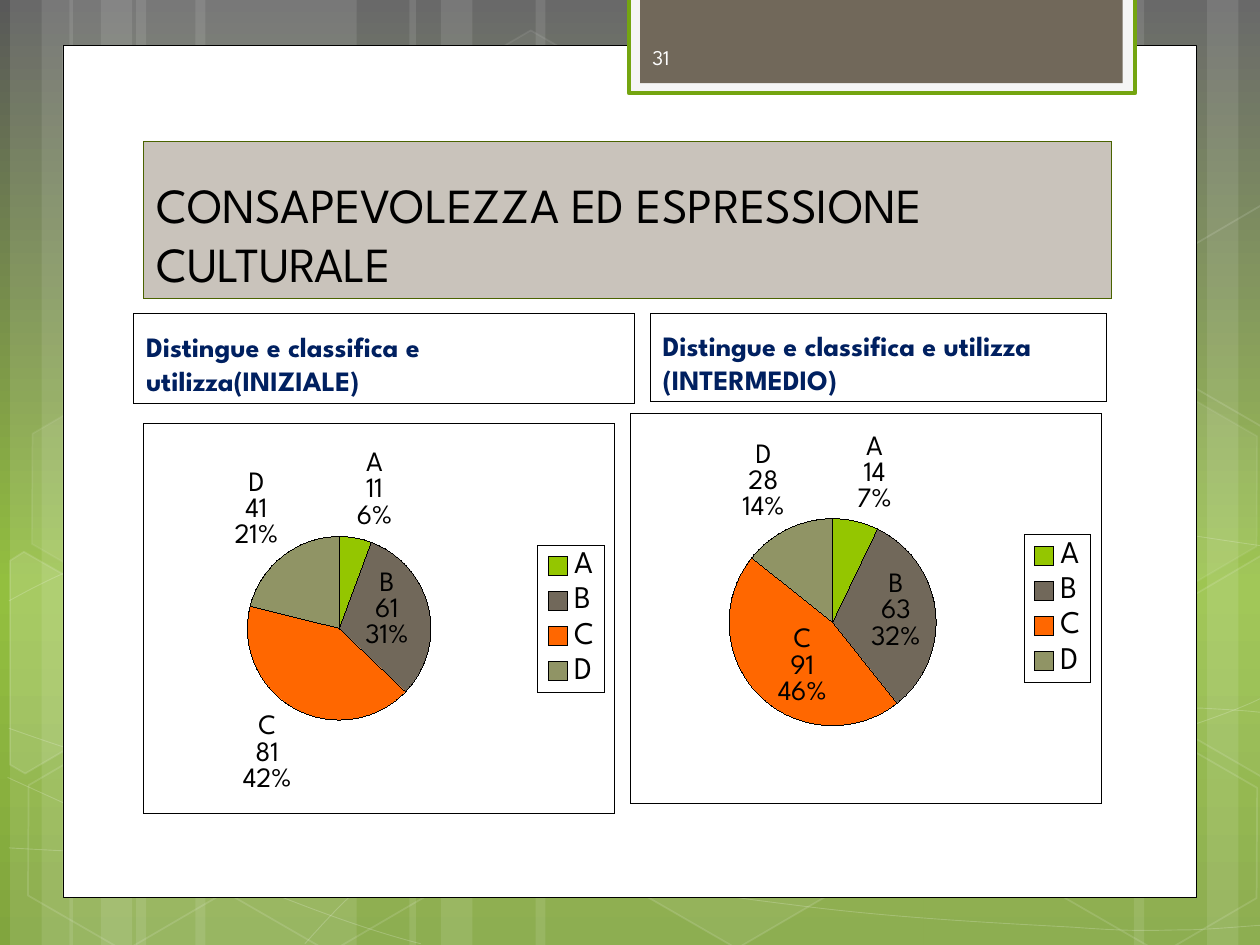
from copy import deepcopy

from lxml.etree import SubElement
from pptx import Presentation
from pptx.chart.data import CategoryChartData
from pptx.dml.color import RGBColor
from pptx.enum.chart import XL_CHART_TYPE, XL_LABEL_POSITION, XL_LEGEND_POSITION
from pptx.enum.shapes import MSO_SHAPE
from pptx.enum.text import MSO_ANCHOR, MSO_AUTO_SIZE, PP_ALIGN
from pptx.oxml import parse_xml
from pptx.oxml.ns import nsdecls, qn
from pptx.util import Inches, Pt

FONT = "League Spartan"
BACKGROUND = [(0, "595959"), (0.62, "93BF3F"), (1, "81A53E")]

# Background decoration: bands as (left, width), all full height
BANDS = [(1.08, 1.75), (0.08, 0.5), (0.33, 0.83), (1.55, 1.75), (0.55, 0.5), (0.8, 0.83),
         (7.33, 1.75), (9.58, 0.5), (9, 0.83), (4.25, 3.08), (3.25, 0.5), (3.5, 0.83)]
# Start point, then Bézier segments of two control points and an end point, or lines
CURVES = [
    [(0.07, 6.73), (0.61, 6.76, 1.15, 6.79, 1.9, 6.78), (2.65, 6.77, 3.58, 6.75, 4.58, 6.65),
     (5.58, 6.55, 7, 6.36, 7.92, 6.17), (8.83, 5.98, 9.77, 5.68, 10.07, 5.51)],
    [(0.07, 4.77), (0.36, 4.61, 0.65, 4.46, 1.21, 4.31), (1.78, 4.16, 2.59, 3.94, 3.47, 3.87),
     (4.36, 3.8, 5.44, 3.79, 6.54, 3.87), (7.64, 3.95, 9.47, 4.26, 10.07, 4.34)],
    [(0.06, 6.17), (1.27, 6.72, 2.47, 7.27, 3.34, 7.49)],
    [(0.07, 5.78), (0.38, 5.89, 0.7, 6, 1.28, 6.16), (1.86, 6.31, 2.73, 6.56, 3.57, 6.73),
     (4.4, 6.9, 5.45, 7.08, 6.28, 7.18), (7.11, 7.29, 8, 7.33, 8.53, 7.36),
     (9.05, 7.4, 9.19, 7.38, 9.45, 7.38), (9.71, 7.37, 9.89, 7.35, 10.07, 7.34)],
    [(2.42, 7.49), (2.6, 7.29, 2.78, 7.09, 3.02, 6.91), (3.26, 6.73, 3.6, 6.53, 3.88, 6.39),
     (4.16, 6.25, 4.33, 6.19, 4.7, 6.09), (5.06, 5.99, 5.73, 5.85, 6.08, 5.78),
     (6.44, 5.71, 6.49, 5.71, 6.8, 5.69), (7.11, 5.66, 7.6, 5.63, 7.94, 5.62),
     (8.29, 5.61, 8.86, 5.62, 8.86, 5.62), (9.53, 5.62),
     (9.71, 5.63, 9.88, 5.64, 9.97, 5.65), (10.06, 5.66, 10.03, 5.65, 10.06, 5.66)],
]
# left, top, fill opacity, line opacity (percent)
HEXAGONS = [(3.34, 0.36, 4, 8), (4.97, 5.89, 6, 12), (0.11, 5.91, 0, 12),
            (0.14, 3.12, 7, 8), (1.74, 5.92, 0, 12), (7.53, 4.53, 10, 12),
            (8.34, 5.93, 0, 12), (8.34, 3.14, 7, 8)]
# points, fill opacity
CUT_HEXAGONS = [
    ([(0.08, 4.45), (0.19, 4.38), (0.96, 4.82), (0.95, 5.7), (0.2, 6.14), (0.08, 6.07)], 10),
    ([(9.26, 4.85), (10.01, 4.41), (10.09, 4.46), (10.09, 6.13), (10.02, 6.17), (9.26, 5.73)], 4),
    ([(9.26, 2.07), (10.01, 1.63), (10.1, 1.68), (10.09, 3.35), (10.02, 3.39), (9.26, 2.95)], 0),
]
# box, fill, line colour, line width
PANELS = [((0.5, 0.36, 9, 6.76), "FFFFFF", "000000", 0.5),
          ((4.99, -0.02, 4.02, 0.76), "F5F5F5", "74A510", 2.25),
          ((5.08, -0.02, 3.83, 0.68), "71685A", None, None)]

TITLE = "CONSAPEVOLEZZA ED ESPRESSIONE CULTURALE"
PAGE_NUMBER = "31"
GRADES = {"A": "94C600", "B": "71685A", "C": "FF6700", "D": "909465"}
COLUMNS = [
    {"placeholder": 1, "heading": "Distingue e classifica e utilizza(INIZIALE)",
     "heading_box": (1.06, 2.49, 3.98, 0.71), "chart_box": (1.14, 3.36, 3.74, 3.1),
     "values": (11, 61, 81, 41), "pie": {"x": 0.22, "y": 0.29, "w": 0.39, "h": 0.47}},
    {"placeholder": 3, "heading": "Distingue e classifica e utilizza (INTERMEDIO)",
     "heading_box": (5.16, 2.49, 3.62, 0.7), "chart_box": (5, 3.28, 3.74, 3.1),
     "values": (14, 63, 91, 28), "pie": {"x": 0.21, "y": 0.27, "w": 0.44, "h": 0.53}},
]


def paint(fill, color, opacity=100):
    if not color or not opacity:
        fill.background()
        return
    fill.solid()
    fill.fore_color.rgb = RGBColor.from_string(color)
    if opacity < 100:
        node = fill._xPr.find(qn("a:solidFill")).find(qn("a:srgbClr"))
        SubElement(node, qn("a:alpha"), val=str(opacity * 1000))


def outline(line, color, width=None, opacity=100):
    """Colour a line; without a width it stays a hairline."""
    paint(line.fill, color, opacity)
    if width:
        line.width = Pt(width)


def style_font(font, size, color="000000", bold=False):
    font.name, font.size, font.bold = FONT, Pt(size), bold
    font.color.rgb = RGBColor.from_string(color)


def add_preset(page, preset, box):
    shape = page.shapes.add_shape(preset, *map(Inches, box))
    shape.shadow.inherit = False
    return shape


def add_outline(page, points, closed):
    points = [(Inches(x), Inches(y)) for x, y in points]
    builder = page.shapes.build_freeform(*points[0])
    builder.add_line_segments(points[1:], close=closed)
    shape = builder.convert_to_shape()
    shape.shadow.inherit = False
    return shape


def add_curve(page, start, *segments):
    """Draw a freeform through the end points, then bend its Bézier segments."""
    shape = add_outline(page, [start] + [segment[-2:] for segment in segments], False)
    lines = shape._element.findall(".//" + qn("a:lnTo"))
    for line, segment in zip(lines, segments):
        if len(segment) == 6:
            line.tag = qn("a:cubicBezTo")
            for index in (0, 2):
                control = parse_xml(f'<a:pt {nsdecls("a")}/>')
                control.set("x", str(Inches(segment[index]) - shape.left))
                control.set("y", str(Inches(segment[index + 1]) - shape.top))
                line.insert(index // 2, control)
    return shape


def set_background(page):
    fill = page.background.fill
    fill.gradient()
    fill.gradient_angle = 270
    stop_list = page._element.find(".//" + qn("a:gsLst"))
    stop_list.append(deepcopy(stop_list[-1]))
    for stop, (position, color) in zip(fill.gradient_stops, BACKGROUND):
        stop.position = position
        stop.color.rgb = RGBColor.from_string(color)


def decorate(page):
    for left, width in BANDS:
        band = add_preset(page, MSO_SHAPE.RECTANGLE, (left, 0, width, 7.5))
        paint(band.fill, "FFFFFF", 10)
        outline(band.line, None)
    for curve in CURVES:
        shape = add_curve(page, *curve)
        paint(shape.fill, None)
        outline(shape.line, "FFFFFF", 0.5, 20)
    for left, top, fill_opacity, line_opacity in HEXAGONS:
        hexagon = add_preset(page, MSO_SHAPE.HEXAGON, (left, top, 1.75, 1.52))
        hexagon.rotation = 30
        hexagon.adjustments[0] = 0.285
        paint(hexagon.fill, "FFFFFF", fill_opacity)
        outline(hexagon.line, "FFFFFF", 1, line_opacity)
    for points, opacity in CUT_HEXAGONS:
        shape = add_outline(page, points, True)
        paint(shape.fill, "FFFFFF", opacity)
        outline(shape.line, "FFFFFF", 1, 12)
    for box, fill, line, width in PANELS:
        panel = add_preset(page, MSO_SHAPE.RECTANGLE, box)
        paint(panel.fill, fill)
        outline(panel.line, line, width)


def write(shape, box, text, anchor, size, color, bold=False):
    """Place the shape on top of the page and set its one paragraph."""
    shape._element.getparent().append(shape._element)
    shape.left, shape.top, shape.width, shape.height = map(Inches, box)
    frame = shape.text_frame
    frame.word_wrap, frame.auto_size = True, MSO_AUTO_SIZE.NONE
    frame.vertical_anchor = anchor
    para = frame.paragraphs[0]
    para.alignment = PP_ALIGN.LEFT
    span = para.add_run()
    span.text = text
    style_font(span.font, size, color, bold)


def border_xml():
    return parse_xml(f'<c:spPr {nsdecls("c", "a")}><a:noFill/><a:ln><a:solidFill>'
                     '<a:srgbClr val="000000"/></a:solidFill></a:ln></c:spPr>')


def add_pie(page, column):
    data = CategoryChartData()
    data.categories = list(GRADES)
    data.add_series("Series 1", column["values"])
    chart = page.shapes.add_chart(XL_CHART_TYPE.PIE, *map(Inches, column["chart_box"]), data).chart
    chart.has_title = False
    style_font(chart.font, 18)
    chart._chartSpace.find(qn("c:chart")).addnext(border_xml())
    chart.has_legend = True
    chart.legend.position = XL_LEGEND_POSITION.RIGHT
    chart.legend.include_in_layout = False
    style_font(chart.legend.font, 18)
    chart.legend._element.find(qn("c:overlay")).addnext(border_xml())

    plot_area = chart._chartSpace.find(".//" + qn("c:plotArea"))
    for layout in plot_area.findall(qn("c:layout")):
        plot_area.remove(layout)
    sizes = "".join(f'<c:{key} val="{value}"/>' for key, value in column["pie"].items())
    plot_area.insert(0, parse_xml(
        f'<c:layout {nsdecls("c")}><c:manualLayout><c:layoutTarget val="inner"/>'
        f'<c:xMode val="edge"/><c:yMode val="edge"/>{sizes}</c:manualLayout></c:layout>'))

    series = chart.plots[0].series[0]
    for index, color in enumerate(GRADES.values()):
        slice_format = series.points[index].format
        paint(slice_format.fill, color)
        outline(slice_format.line, "000000")
    labels = series.data_labels
    labels.show_value = labels.show_category_name = labels.show_percentage = True
    labels.position = XL_LABEL_POSITION.BEST_FIT
    style_font(labels.font, 16)
    separator = parse_xml(f'<c:separator {nsdecls("c")}>\n</c:separator>')
    labels._element.find(qn("c:showBubbleSize")).addnext(separator)


deck = Presentation()
deck.slide_width, deck.slide_height = Inches(10), Inches(7.5)
page = deck.slides.add_slide(deck.slide_layouts[4])
holders = {holder.placeholder_format.idx: holder for holder in page.placeholders}
set_background(page)
decorate(page)

title = holders.pop(0)
write(title, (1.14, 1.12, 7.68, 1.25), TITLE, MSO_ANCHOR.BOTTOM, 28, "000000")
paint(title.fill, "C9C3BB")
outline(title.line, "4A6300")

for column in COLUMNS:
    heading = holders.pop(column["placeholder"])
    write(heading, column["heading_box"], column["heading"], MSO_ANCHOR.BOTTOM, 16, "002060", True)
    heading.text_frame.paragraphs[0].space_before = Pt(3)
    outline(heading.line, "000000")
    add_pie(page, column)

for unused in holders.values():
    unused._element.getparent().remove(unused._element)

number_box = (5.08, 0.25, 1.46, 0.4)
number = page.shapes.add_textbox(*map(Inches, number_box))
write(number, number_box, PAGE_NUMBER, MSO_ANCHOR.MIDDLE, 12, "FEFEFE")

deck.save("out.pptx")
